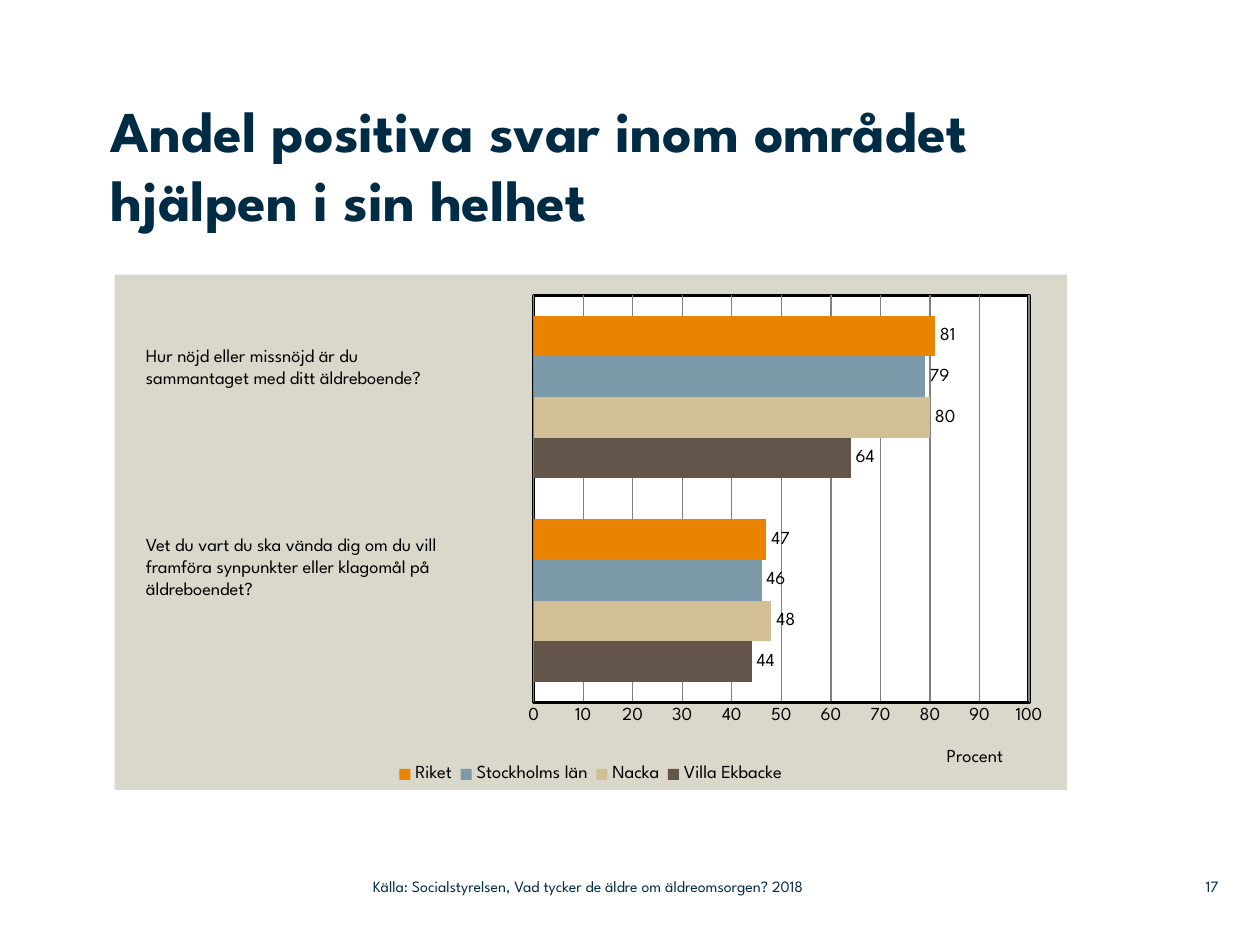
from lxml import etree
from pptx import Presentation
from pptx.chart.data import CategoryChartData
from pptx.dml.color import RGBColor
from pptx.enum import chart as ch, text as tx
from pptx.oxml.ns import qn
from pptx.util import Inches, Pt

# Content
FONT = "League Spartan"
NAVY, BLACK, GREY, BEIGE, WHITE = "002B45", "000000", "808080", "DAD7CB", "FFFFFF"
TITLE = "Andel positiva svar inom området hjälpen i sin helhet"
CATEGORIES = ["1", "2"]
SERIES = [  # name, values, colour; the first is drawn lowest
    ("Villa Ekbacke", (44, 64), "635549"),
    ("Nacka", (48, 80), "D3BF96"),
    ("Stockholms län", (46, 79), "7D9AAA"),
    ("Riket", (47, 81), "E98300"),
]
QUESTIONS = [  # paragraphs, box
    (["Hur nöjd eller missnöjd är du", "sammantaget med ditt äldreboende?"],
     (1.06, 2.68, 2.98, 0.45)),
    (["Vet du vart du ska vända dig om du vill framföra synpunkter "
      "eller klagomål på äldreboendet?"],
     (1.06, 4.18, 2.97, 0.63)),
]
FOOTERS = [  # text, box, alignment
    ("Källa: Socialstyrelsen, Vad tycker de äldre om äldreomsorgen? 2018",
     (2.96, 6.89, 4.43, 0.29), tx.PP_ALIGN.LEFT),
    ("17", (9.2, 6.89, 0.47, 0.29), tx.PP_ALIGN.RIGHT),
]


def rgb(colour):
    return RGBColor.from_string(colour)


def set_font(font, size, colour, bold=False):
    font.name, font.size, font.bold = FONT, Pt(size), bold
    font.color.rgb = rgb(colour)


def set_line(line, colour, width):
    line.color.rgb = rgb(colour)
    line.width = Pt(width)


def remove_margins(frame):
    frame.margin_left = frame.margin_right = frame.margin_top = frame.margin_bottom = 0


def add_text(slide, paragraphs, box, size, colour, align=tx.PP_ALIGN.LEFT):
    frame = slide.shapes.add_textbox(*map(Inches, box)).text_frame
    frame.word_wrap = True
    frame.text = "\n".join(paragraphs)
    for paragraph in frame.paragraphs:
        paragraph.alignment = align
        set_font(paragraph.font, size, colour)
    return frame


def set_layout(parent, index, inner=False, **place):
    """Give a chart part a fixed place, in fractions of the chart."""
    for old in parent.findall(qn("c:layout")):
        parent.remove(old)
    layout = etree.Element(qn("c:layout"))
    manual = etree.SubElement(layout, qn("c:manualLayout"))
    values = {"layoutTarget": "inner"} if inner else {}
    values.update(xMode="edge", yMode="edge", **place)
    for name, value in values.items():
        etree.SubElement(manual, qn("c:" + name), val=str(value))
    parent.insert(index, layout)


def shape_properties(fill, line=None, width=0):
    properties = etree.Element(qn("c:spPr"))
    solid = etree.SubElement(properties, qn("a:solidFill"))
    etree.SubElement(solid, qn("a:srgbClr"), val=fill)
    outline = etree.SubElement(properties, qn("a:ln"), w=str(Pt(width)))
    if line:
        solid = etree.SubElement(outline, qn("a:solidFill"))
        etree.SubElement(solid, qn("a:srgbClr"), val=line)
    else:
        etree.SubElement(outline, qn("a:noFill"))
    return properties


def add_bar_chart(slide):
    data = CategoryChartData()
    data.categories = CATEGORIES
    for name, values, _ in SERIES:
        data.add_series(name, values)
    chart = slide.shapes.add_chart(
        ch.XL_CHART_TYPE.BAR_CLUSTERED,
        *map(Inches, (0.91, 2.18, 7.56, 4.09)), data).chart
    set_font(chart.font, 10.5, BLACK)
    chart.has_title = False

    # Bars and value labels
    plot = chart.plots[0]
    plot.gap_width, plot.overlap, plot.vary_by_categories = 100, 0, False
    for series, (_, _, colour) in zip(plot.series, SERIES):
        series.format.fill.solid()
        series.format.fill.fore_color.rgb = rgb(colour)
        labels = series.data_labels
        labels.show_value = True
        labels.position = ch.XL_LABEL_POSITION.OUTSIDE_END
        set_font(labels.font, 10.5, BLACK)

    # Axes
    chart.category_axis.visible = False
    axis = chart.value_axis
    axis.minimum_scale, axis.maximum_scale, axis.major_unit = 0, 100, 10
    axis.major_tick_mark = axis.minor_tick_mark = ch.XL_TICK_MARK.NONE
    set_line(axis.format.line, BLACK, 2)
    set_line(axis.major_gridlines.format.line, GREY, 0.75)
    set_font(axis.tick_labels.font, 10.5, BLACK)
    title = axis.axis_title
    title.text_frame.text = "Procent"
    set_font(title.text_frame.paragraphs[0].font, 10.5, BLACK)

    # Legend
    chart.has_legend = True
    chart.legend.position = ch.XL_LEGEND_POSITION.BOTTOM
    chart.legend.include_in_layout = False
    set_font(chart.legend.font, 10.5, BLACK)

    # Places and backgrounds
    space = chart._chartSpace
    body = space.find(qn("c:chart"))
    plot_area = body.find(qn("c:plotArea"))
    set_layout(plot_area, 0, inner=True, x=0.44, y=0.04, w=0.52, h=0.79)
    set_layout(title._element, 1, x=0.87, y=0.91)
    set_layout(body.find(qn("c:legend")), 1, x=0.29, y=0.95, w=0.42, h=0.05)
    plot_area.append(shape_properties(WHITE, BLACK, 2))
    body.addnext(shape_properties(BEIGE))


def main():
    presentation = Presentation()
    presentation.slide_width, presentation.slide_height = Inches(10), Inches(7.5)
    slide = presentation.slides.add_slide(presentation.slide_layouts[5])

    # Title
    title = slide.shapes.title
    title.left, title.top, title.width, title.height = map(Inches, (0.88, 0.75, 7.6, 1.42))
    frame = title.text_frame
    frame.text = TITLE
    frame.auto_size = tx.MSO_AUTO_SIZE.NONE
    frame.vertical_anchor = tx.MSO_ANCHOR.TOP
    remove_margins(frame)
    frame.paragraphs[0].alignment = tx.PP_ALIGN.LEFT
    set_font(frame.paragraphs[0].font, 33, NAVY, bold=True)

    # Chart with its questions
    add_bar_chart(slide)
    for paragraphs, box in QUESTIONS:
        add_text(slide, paragraphs, box, 10.5, BLACK)

    # Source and page number
    for words, box, align in FOOTERS:
        frame = add_text(slide, [words], box, 9, NAVY, align)
        frame.vertical_anchor = tx.MSO_ANCHOR.MIDDLE
        remove_margins(frame)

    presentation.save("out.pptx")


if __name__ == "__main__":
    main()
